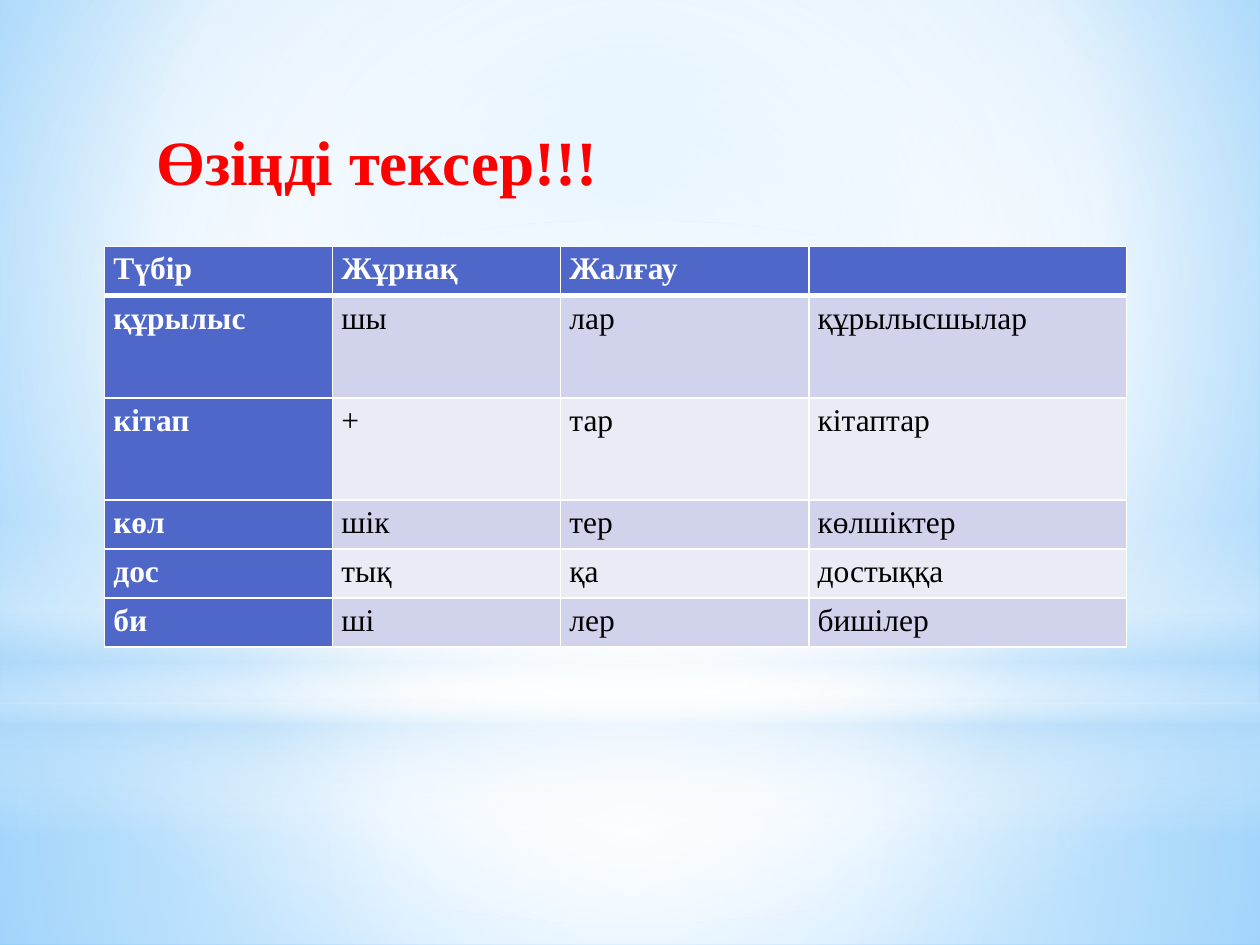
from lxml import etree
from pptx import Presentation
from pptx import util as u
from pptx.dml.color import RGBColor
from pptx.enum import shapes
from pptx.oxml.ns import qn

WIDTH, HEIGHT = u.Inches(10), u.Inches(7.5)
FONT = "Times New Roman"
RED = RGBColor(0xFF, 0x00, 0x00)
WHITE = RGBColor(0xFF, 0xFF, 0xFF)
BLACK = RGBColor(0x00, 0x00, 0x00)
BLUE = RGBColor(0x4E, 0x67, 0xC8)
BAND_DARK = RGBColor(0xD0, 0xD3, 0xEB)
BAND_LIGHT = RGBColor(0xE9, 0xEB, 0xF5)
SKY = RGBColor(0x9E, 0xD5, 0xFF)
DEEP_SKY = RGBColor(0x5B, 0xB9, 0xFF)
PALE_SKY = RGBColor(0xB4, 0xDC, 0xFA)

CENTRE = (50, 50, 50, 50)
HORIZON = 0.744
COLUMNS = [1.81, 1.81, 1.97, 2.52]
ROWS = [0.39, 0.81, 0.81, 0.39, 0.39, 0.39]
WORDS = [
    ["Түбір", "Жұрнақ", "Жалғау", ""],
    ["құрылыс", "шы", "лар", "құрылысшылар"],
    ["кітап", "+", "тар", "кітаптар"],
    ["көл", "шік", "тер", "көлшіктер"],
    ["дос", "тық", "қа", "достыққа"],
    ["би", "ші", "лер", "бишілер"],
]


def add_solid(parent, color, alpha=100):
    """Append a colour with its opacity in percent to an XML element."""
    clr = etree.SubElement(parent, qn("a:srgbClr"), val=str(color))
    if alpha < 100:
        etree.SubElement(clr, qn("a:alpha"), val=str(alpha * 1000))


def set_gradient(element, stops, focus=None):
    """Swap the first solid fill for a gradient, circular if it has a focus."""
    grad = etree.Element(qn("a:gradFill"), rotWithShape="1")
    stop_list = etree.SubElement(grad, qn("a:gsLst"))
    for pos, color, alpha in stops:
        add_solid(etree.SubElement(stop_list, qn("a:gs"), pos=str(pos * 1000)), color, alpha)
    if focus:
        shade = etree.SubElement(grad, qn("a:path"), path="circle")
        sides = {side: str(share * 1000) for side, share in zip("ltrb", focus)}
        etree.SubElement(shade, qn("a:fillToRect"), **sides)
    else:
        etree.SubElement(grad, qn("a:lin"), ang="5400000", scaled="0")
    solid = element.find(".//" + qn("a:solidFill"))
    solid.getparent().replace(solid, grad)


def add_glow(s, kind, top, height, stops, focus=CENTRE):
    """Add a full-width gradient shape placed by shares of the slide height."""
    sp = s.shapes.add_shape(kind, 0, int(HEIGHT * top), WIDTH, int(HEIGHT * height))
    sp.shadow.inherit = False
    sp.line.fill.background()
    sp.fill.solid()
    set_gradient(sp.element, stops, focus)


def add_backdrop(s):
    """Paint the sky background and its light effects."""
    rect, oval = shapes.MSO_SHAPE.RECTANGLE, shapes.MSO_SHAPE.OVAL
    s.background.fill.solid()
    sky = [(0, SKY, 100), (60, WHITE, 100), (100, DEEP_SKY, 100)]
    set_gradient(s.element, sky, (20, 10, 20, 60))
    add_glow(s, rect, HORIZON, 1 - HORIZON, [(0, WHITE, 91), (37, WHITE, 76), (100, PALE_SKY, 79)])
    add_glow(s, rect, 0, HORIZON, [(0, WHITE, 89), (48, WHITE, 62), (100, PALE_SKY, 79)])
    band = [(0, WHITE, 0), (29, WHITE, 30), (45, PALE_SKY, 40),
            (55, WHITE, 26), (65, PALE_SKY, 60), (100, WHITE, 0)]
    add_glow(s, rect, 0.55, 0.333, band, None)
    add_glow(s, oval, 0.233, HORIZON, [(0, WHITE, 100), (56, WHITE, 0)])


def style_font(font, size, color, bold):
    """Set the face, size, colour and weight of a font."""
    font.name, font.size, font.bold = FONT, u.Pt(size), bold
    font.color.rgb = color


def add_title(s, title):
    """Add the slide heading."""
    box = s.shapes.add_textbox(int(WIDTH * 0.114), int(HEIGHT * 0.123),
                               int(WIDTH * 0.598), int(HEIGHT * 0.095))
    tf = box.text_frame
    tf.word_wrap = True
    tf.text = title
    style_font(tf.paragraphs[0].runs[0].font, 36, RED, True)


def set_borders(cell, top, bottom):
    """Draw white cell borders; top and bottom widths are in points."""
    props = cell._tc.get_or_add_tcPr()
    for i, (side, width) in enumerate(zip("LRTB", (1, 1, top, bottom))):
        ln = etree.Element(qn("a:ln" + side), w=str(u.Pt(width)))
        add_solid(etree.SubElement(ln, qn("a:solidFill")), WHITE)
        props.insert(i, ln)


def fill_cell(cell, word, row, col):
    """Write and style one cell by its place in the table."""
    head = row == 0 or col == 0
    cell.margin_left = cell.margin_right = u.Inches(0.07)
    cell.margin_top = cell.margin_bottom = 0
    cell.fill.solid()
    cell.fill.fore_color.rgb = BLUE if head else BAND_DARK if row % 2 else BAND_LIGHT
    set_borders(cell, 3 if row == 1 else 1, 3 if row == 0 else 1)
    p = cell.text_frame.paragraphs[0]
    p.text = word
    p.line_spacing = 1.15
    style_font(p.font, 18, WHITE if head else BLACK, head)
    for r in p.runs:
        style_font(r.font, 18, WHITE if head else BLACK, head)


def add_word_table(s):
    """Add the table of roots, suffixes, endings and whole words."""
    frame = s.shapes.add_table(len(ROWS), len(COLUMNS), int(WIDTH * 0.083), int(HEIGHT * 0.261),
                               u.Inches(sum(COLUMNS)), u.Inches(sum(ROWS)))
    table = frame.table
    for column, width in zip(table.columns, COLUMNS):
        column.width = u.Inches(width)
    for row, height in zip(table.rows, ROWS):
        row.height = u.Inches(height)
    for i, words in enumerate(WORDS):
        for j, word in enumerate(words):
            fill_cell(table.cell(i, j), word, i, j)


def main():
    """Build and save the slide."""
    prs = Presentation()
    prs.slide_width, prs.slide_height = WIDTH, HEIGHT
    s = prs.slides.add_slide(prs.slide_layouts[6])
    add_backdrop(s)
    add_word_table(s)
    add_title(s, "Өзіңді тексер!!!")
    prs.save("out.pptx")


if __name__ == "__main__":
    main()
